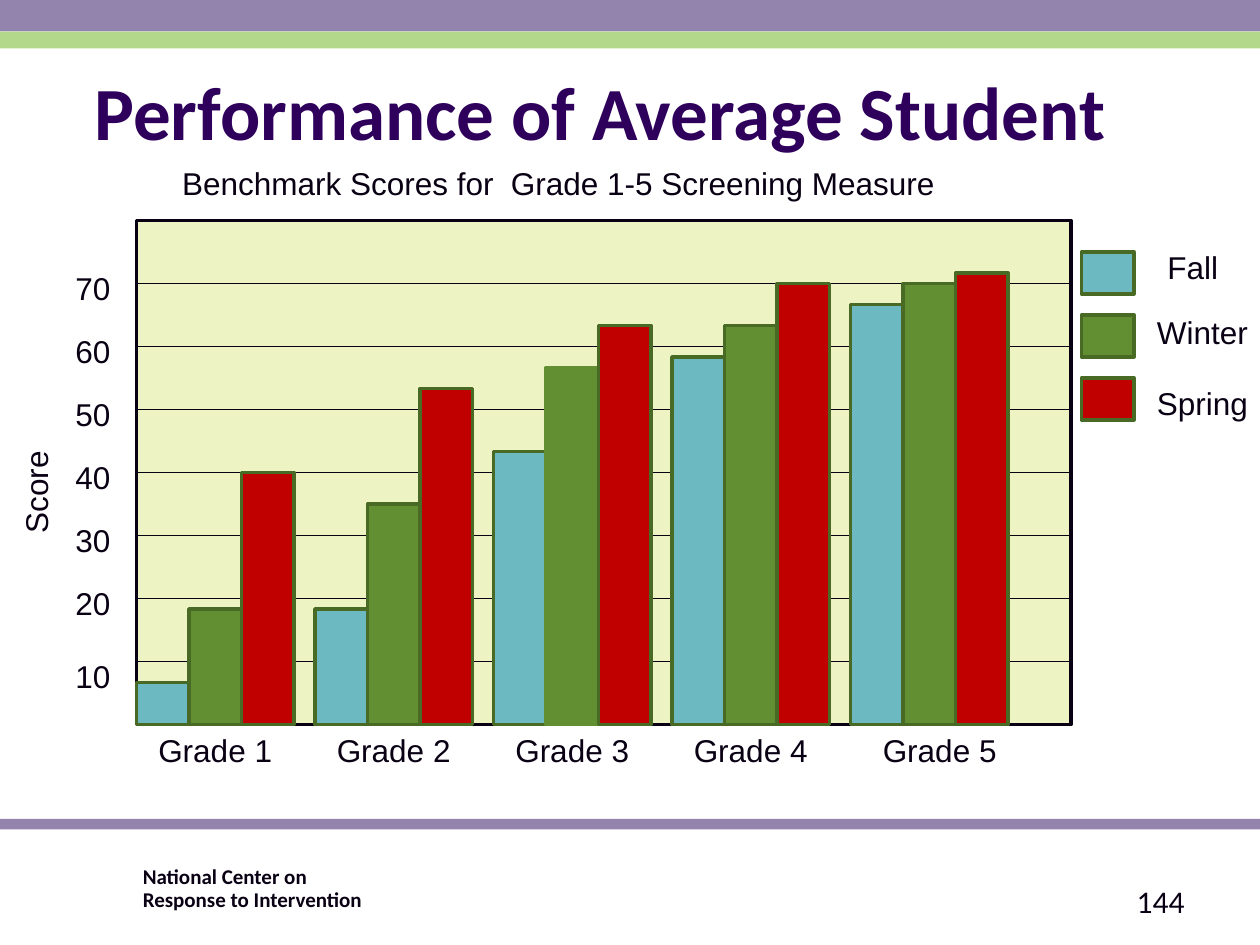
from dataclasses import dataclass

from lxml import etree
from pptx import Presentation, util as u
from pptx.dml.color import RGBColor
from pptx.enum import shapes, text
from pptx.oxml.ns import qn

EMU_PER_PX = 7620  # 120 px to the inch


@dataclass(frozen=True)
class Theme:
    purple: str = "9284AC"
    green: str = "B4D88B"
    ink: str = "0A0014"
    title_ink: str = "2E005C"
    plot: str = "EEF3C3"
    fall: str = "6DB9C1"
    winter: str = "628F31"
    spring: str = "C00000"
    bar_line: str = "496A24"
    body_font: str = "Arial"
    heading_font: str = "Calibri"
    title_size: float = 42.9
    body_size: float = 18
    footer_size: float = 12
    outline: float = 2
    grid_line: float = 0.75


THEME = Theme()


@dataclass(frozen=True)
class Box:
    left: int
    top: int
    width: int
    height: int

    def emu(self) -> list[u.Emu]:
        return [px(n) for n in (self.left, self.top, self.width, self.height)]


@dataclass(frozen=True)
class Label:
    words: str
    box: Box
    align: text.PP_ALIGN = text.PP_ALIGN.LEFT
    anchor: text.MSO_ANCHOR = text.MSO_ANCHOR.TOP
    font: str = THEME.body_font
    size: float = THEME.body_size
    color: str = THEME.ink
    bold: bool = False
    fit: bool = True
    insets: tuple[int, int, int, int] = (12, 6, 12, 6)
    line_spacing: float = 1.0
    rotation: int = 0


@dataclass(frozen=True)
class Season:
    name: str
    color: str
    text_box: Box


@dataclass(frozen=True)
class Grade:
    name: str
    bar_heights: tuple[int, int, int]
    label_left: int


def px(length: int) -> u.Emu:
    return u.Emu(length * EMU_PER_PX)


def add_rectangle(slide, box: Box, fill: str, line: str | None = None):
    shape = slide.shapes.add_shape(shapes.MSO_SHAPE.RECTANGLE, *box.emu())
    shape.shadow.inherit = False
    shape.fill.solid()
    shape.fill.fore_color.rgb = RGBColor.from_string(fill)
    if line:
        shape.line.color.rgb = RGBColor.from_string(line)
        shape.line.width = u.Pt(THEME.outline)
    else:
        shape.line.fill.background()
    return shape


def add_grid_line(slide, left: int, right: int, y: int):
    connector = slide.shapes.add_connector(
        shapes.MSO_CONNECTOR.STRAIGHT, px(left), px(y), px(right), px(y))
    connector.line.color.rgb = RGBColor.from_string(THEME.ink)
    connector.line.width = u.Pt(THEME.grid_line)
    etree.SubElement(connector._element.spPr, qn("a:effectLst"))
    return connector


def add_label(slide, label: Label) -> None:
    shape = slide.shapes.add_textbox(*label.box.emu())
    shape.rotation = label.rotation
    frame = shape.text_frame
    frame.word_wrap = True
    frame.vertical_anchor = label.anchor
    if label.fit:
        frame.auto_size = text.MSO_AUTO_SIZE.SHAPE_TO_FIT_TEXT
    (frame.margin_left, frame.margin_top,
     frame.margin_right, frame.margin_bottom) = map(px, label.insets)
    paragraph = frame.paragraphs[0]
    paragraph.text = label.words
    paragraph.alignment = label.align
    paragraph.line_spacing = label.line_spacing
    paragraph.font.name = label.font
    paragraph.font.size = u.Pt(label.size)
    paragraph.font.bold = label.bold
    paragraph.font.color.rgb = RGBColor.from_string(label.color)


# Plot geometry and data; ten score points are one grid step
PLOT = Box(130, 210, 890, 480)
PLOT_RIGHT = PLOT.left + PLOT.width
PLOT_BOTTOM = PLOT.top + PLOT.height
GRID_STEP = 60
BAR_WIDTH = 50
GROUP_STEP = 170
SEASONS = (
    Season("Fall", THEME.fall, Box(1100, 230, 110, 48)),
    Season("Winter", THEME.winter, Box(1090, 292, 170, 48)),
    Season("Spring", THEME.spring, Box(1090, 360, 150, 48)),
)
GRADES = (
    Grade("Grade 1", (40, 110, 240), 120),
    Grade("Grade 2", (110, 210, 320), 290),
    Grade("Grade 3", (260, 340, 380), 460),
    Grade("Grade 4", (350, 380, 420), 630),
    Grade("Grade 5", (400, 420, 430), 810),
)
UNLINED_BAR = ("Grade 3", "Winter")  # outlined in its own fill colour


def add_frame(slide) -> None:
    add_rectangle(slide, Box(0, 780, 1200, 10), THEME.purple)
    add_rectangle(slide, Box(0, 0, 1200, 30), THEME.purple)
    add_rectangle(slide, Box(0, 30, 1200, 16), THEME.green)
    add_label(slide, Label(
        "National Center on \vResponse to Intervention", Box(131, 820, 389, 36),
        font=THEME.heading_font, size=THEME.footer_size, bold=True, fit=False,
        insets=(5, 5, 5, 5), line_spacing=0.9))
    add_label(slide, Label(
        "144", Box(860, 834, 280, 48), text.PP_ALIGN.RIGHT,
        text.MSO_ANCHOR.MIDDLE, THEME.heading_font, fit=False))


def add_headings(slide) -> None:
    add_label(slide, Label(
        "Performance of Average Student", Box(40, 50, 1080, 110),
        text.PP_ALIGN.CENTER, text.MSO_ANCHOR.MIDDLE, THEME.heading_font,
        THEME.title_size, THEME.title_ink, True, False, (12, 6, 29, 6)))
    add_label(slide, Label(
        "Benchmark Scores for  Grade 1-5 Screening Measure",
        Box(110, 150, 870, 48), text.PP_ALIGN.CENTER, insets=(12, 6, 38, 6)))


def add_axes(slide) -> None:
    plot = add_rectangle(slide, PLOT, THEME.plot, THEME.ink)
    for step in range(1, 8):
        y = PLOT_BOTTOM - step * GRID_STEP
        grid_line = add_grid_line(slide, PLOT.left, PLOT_RIGHT, y)
        if y == PLOT.top + PLOT.height // 2:
            grid_line.begin_connect(plot, 1)
            grid_line.end_connect(plot, 3)
        # The lowest score sits a little nearer the base
        top = y - 10 if step == 1 else y - 20
        add_label(slide, Label(str(step * 10), Box(60, top, 60, 48)))
    add_label(slide, Label("Score", Box(-36, 426, 140, 48), rotation=270))


def add_bars(slide) -> None:
    for group, grade in enumerate(GRADES):
        group_left = PLOT.left + group * GROUP_STEP
        for index, (season, height) in enumerate(zip(SEASONS, grade.bar_heights)):
            unlined = (grade.name, season.name) == UNLINED_BAR
            box = Box(group_left + index * BAR_WIDTH, PLOT_BOTTOM - height,
                      BAR_WIDTH, height)
            add_rectangle(slide, box, season.color,
                          season.color if unlined else THEME.bar_line)
        add_label(slide, Label(
            grade.name, Box(grade.label_left, PLOT_BOTTOM, 170, 48),
            text.PP_ALIGN.CENTER))


def add_legend(slide) -> None:
    for index, season in enumerate(SEASONS):
        swatch = Box(1030, 240 + index * GRID_STEP, BAR_WIDTH, 40)
        add_rectangle(slide, swatch, season.color, THEME.bar_line)
        add_label(slide, Label(season.name, season.text_box))


def main() -> None:
    presentation = Presentation()
    presentation.slide_width, presentation.slide_height = px(1200), px(900)
    slide = presentation.slides.add_slide(presentation.slide_layouts[6])
    for draw in (add_frame, add_headings, add_axes, add_bars, add_legend):
        draw(slide)
    presentation.save("out.pptx")


if __name__ == "__main__":
    main()
